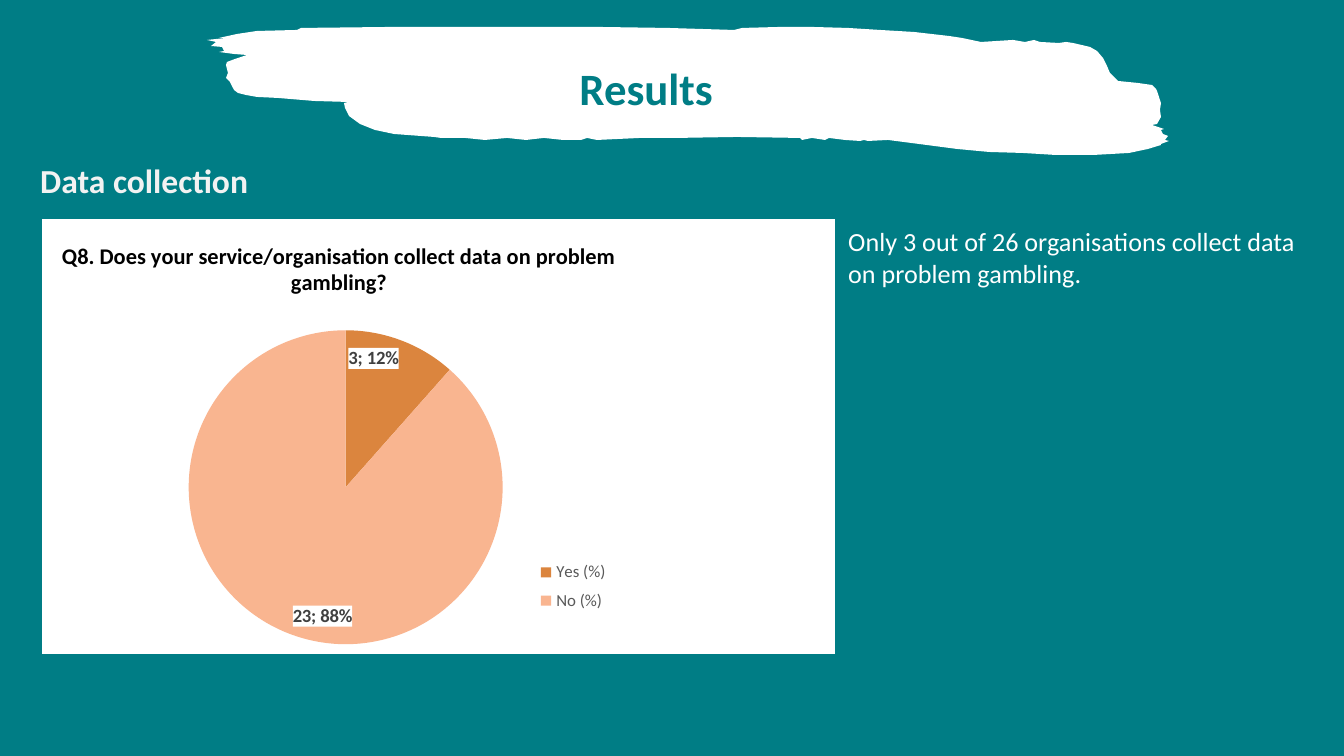
from lxml.etree import SubElement
from pptx import Presentation
from pptx.chart.data import CategoryChartData
from pptx.dml.color import RGBColor
from pptx.enum.chart import XL_CHART_TYPE, XL_LABEL_POSITION, XL_LEGEND_POSITION
from pptx.enum.text import MSO_ANCHOR, MSO_AUTO_SIZE, PP_ALIGN
from pptx.oxml import parse_xml
from pptx.oxml.ns import nsdecls, qn
from pptx.util import Pt

SCALE = 914400 / 134.4
HUES = {
    "teal": "007D85", "white": "FFFFFF", "pale": "F2F2F2", "black": "000000",
    "grey": "595959", "dark": "404040", "yes": "DB853E", "no": "F9B590",
}
BRUSH = [
    (1161, 144), (1169, 141), (1165, 140), (1168, 136), (1163, 134), (1161, 130),
    (1164, 129), (1152, 125), (1157, 124), (1161, 117), (1160, 110), (1161, 103),
    (1157, 91), (1156, 89), (1152, 85), (1138, 83), (1118, 81), (1110, 73),
    (1107, 66), (1103, 58), (1097, 51), (1090, 47), (1073, 43), (1066, 42),
    (1059, 43), (1040, 42), (1034, 40), (1025, 42), (1013, 40), (981, 42),
    (962, 38), (949, 36), (914, 32), (880, 30), (848, 28), (814, 27),
    (778, 27), (742, 28), (734, 30), (668, 28), (602, 27), (469, 27),
    (386, 27), (301, 28), (297, 30), (257, 31), (237, 34), (219, 38),
    (226, 38), (207, 40), (216, 42), (211, 46), (222, 47), (224, 51),
    (219, 52), (234, 54), (247, 55), (235, 59), (227, 62), (226, 65),
    (228, 73), (226, 78), (230, 82), (234, 90), (238, 93), (246, 95),
    (257, 97), (278, 98), (314, 101), (348, 102), (344, 103), (345, 108),
    (349, 116), (360, 124), (375, 130), (394, 134), (434, 137), (441, 138),
    (465, 138), (485, 140), (507, 138), (526, 140), (544, 138), (563, 140),
    (581, 140), (587, 138), (597, 140), (640, 138), (676, 138), (737, 137),
    (800, 138), (802, 140), (812, 138), (825, 140), (829, 138), (845, 140),
    (860, 141), (864, 140), (868, 141), (888, 140), (919, 144), (957, 149),
    (989, 152), (1023, 153), (1056, 155), (1093, 155), (1129, 153), (1148, 149),
    (1161, 145),
]


def px(num):
    return round(num * SCALE)


def style(font, size, hue, bold=False):
    for key, val in {"name": "Calibri", "size": Pt(size), "bold": bold}.items():
        setattr(font, key, val)
    font.color.rgb = RGBColor.from_string(HUES[hue])


def paint(fill, hue):
    fill.solid()
    fill.fore_color.rgb = RGBColor.from_string(HUES[hue])


def put_text(shape, box, text, size, hue, bold=False):
    for key, val in zip(("left", "top", "width", "height"), box):
        setattr(shape, key, px(val))
    frame = shape.text_frame
    look = {"word_wrap": True, "auto_size": MSO_AUTO_SIZE.SHAPE_TO_FIT_TEXT,
            "vertical_anchor": MSO_ANCHOR.TOP}
    for key, val in look.items():
        setattr(frame, key, val)
    line = frame.paragraphs[0]
    line.alignment = PP_ALIGN.LEFT
    run = line.add_run()
    run.text = text
    style(run.font, size, hue, bold)


def add_text(slide, box, *args):
    put_text(slide.shapes.add_textbox(*map(px, box)), box, *args)


def add_brush(slide):
    pen = slide.shapes.build_freeform(*BRUSH[0], scale=SCALE)
    pen.add_line_segments(BRUSH[1:], close=True)
    shape = pen.convert_to_shape()
    shape.shadow.inherit = False
    paint(shape.fill, "white")
    shape.line.fill.background()


def place(node, spots, inner=False):
    for old in node.findall(qn("c:layout")):
        node.remove(old)
    frame = parse_xml(f"<c:layout {nsdecls('c')}/>")
    grid = SubElement(frame, qn("c:manualLayout"))
    rows = [("layoutTarget", "inner")] if inner else []
    rows += [("xMode", "edge"), ("yMode", "edge")]
    rows += zip("xywh", spots)
    for tag, val in rows:
        SubElement(grid, qn(f"c:{tag}")).set("val", str(val))
    return frame


def white_box():
    return parse_xml(
        f"<c:spPr {nsdecls('c', 'a')}><a:solidFill><a:srgbClr val=\"{HUES['white']}\"/>"
        "</a:solidFill><a:ln><a:noFill/></a:ln></c:spPr>")


def add_labels(plot):
    plot.has_data_labels = True
    tags = plot.data_labels
    look = {"show_value": True, "show_percentage": True,
            "position": XL_LABEL_POSITION.INSIDE_END}
    for key, val in look.items():
        setattr(tags, key, val)
    style(tags.font, 10, "dark", True)
    node = tags._element
    node.find(qn("c:txPr")).addprevious(white_box())
    mark = parse_xml(f"<c:separator {nsdecls('c')}>; </c:separator>")
    node.find(qn("c:showBubbleSize")).addnext(mark)


def add_pie(slide, box, title, cats, vals, hues):
    data = CategoryChartData()
    data.categories = cats
    data.add_series("Series 1", vals)
    chart = slide.shapes.add_chart(XL_CHART_TYPE.PIE, *map(px, box), data).chart
    style(chart.font, 10, "black")
    chart._chartSpace.find(qn("c:txPr")).addprevious(white_box())

    line = chart.chart_title.text_frame.paragraphs[0]
    line.alignment = PP_ALIGN.CENTER
    run = line.add_run()
    run.text = title
    style(run.font, 12, "black", True)
    head = chart.chart_title._element
    head.find(qn("c:tx")).addnext(place(head, (0.02, 0.04)))

    chart.has_legend = True
    key = chart.legend
    key.position = XL_LEGEND_POSITION.RIGHT
    key.include_in_layout = False
    style(key.font, 9, "grey")
    node = key._element
    node.find(qn("c:legendPos")).addnext(place(node, (0.61, 0.77, 0.12, 0.15)))

    plot = chart.plots[0]
    plot.vary_by_categories = True
    add_labels(plot)
    for spot, hue in enumerate(hues):
        paint(plot.series[0].points[spot].format.fill, hue)
    area = chart._chartSpace.chart.plotArea
    area.insert(0, place(area, (0.185, 0.256, 0.396, 0.722), True))


def main():
    deck = Presentation()
    deck.slide_width, deck.slide_height = px(1344), px(756)
    slide = deck.slides.add_slide(deck.slide_layouts[5])
    paint(slide.background.fill, "teal")
    add_brush(slide)
    title = slide.shapes.title
    slide.shapes._spTree.append(title._element)
    put_text(title, (566, 54, 339, 67), "Results", 24, "teal", True)
    add_text(slide, (27, 153, 267, 54), "Data collection", 18, "pale", True)
    add_pie(slide, (42, 219, 793, 435),
            "Q8. Does your service/organisation collect data on problem gambling?",
            ("Yes (%)", "No (%)"), (3, 23), ("yes", "no"))
    add_text(slide, (835, 219, 487, 77),
             "Only 3 out of 26 organisations collect data on problem gambling.",
             14, "white")
    deck.save("out.pptx")


if __name__ == "__main__":
    main()
